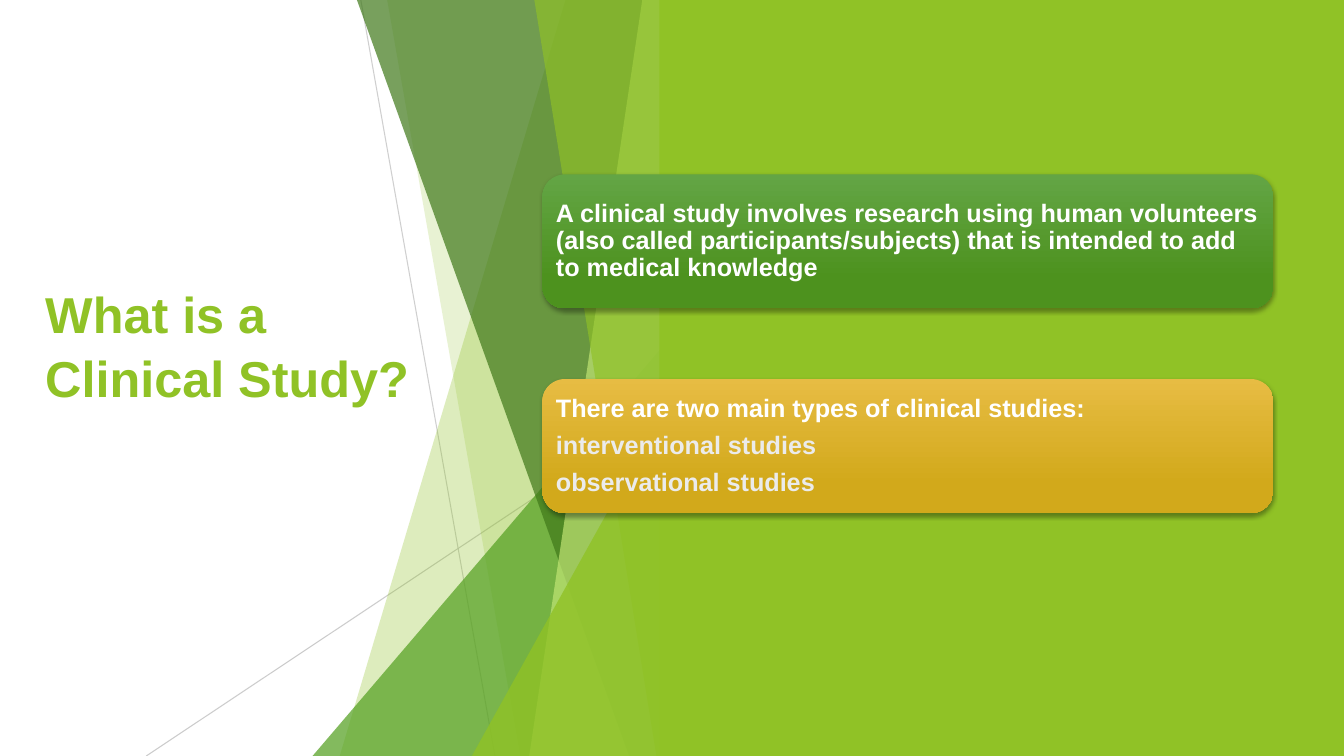
import pptx
import pptx.util
import pptx.dml.color
import pptx.enum.shapes
import pptx.enum.text
import pptx.oxml
import pptx.oxml.ns

COLORS = {
    "lime": "90C226", "green": "54A021", "forest": "3F7819", "pale": "C0E474",
    "line": "BFBFBF", "white": "FFFFFF", "soft white": "EBEBEB", "shadow": "000000",
    "card green top": "63A545", "card green": "4D921E",
    "card gold top": "E7BC43", "card gold": "D2A91B",
}
SHAPES = pptx.enum.shapes.MSO_SHAPE
NAMESPACE = pptx.oxml.ns.nsdecls("a")

presentation = pptx.Presentation()
presentation.slide_width = pptx.util.Inches(13.333)
presentation.slide_height = pptx.util.Inches(7.5)
slide = presentation.slides.add_slide(presentation.slide_layouts[6])


def place(*shares):
    """Turn alternating x and y percentages of the slide into lengths."""
    sides = (presentation.slide_width, presentation.slide_height)
    return [round(share * sides[i % 2] / 100) for i, share in enumerate(shares)]


def paint(color_format, color, opacity=100):
    color_format.rgb = pptx.dml.color.RGBColor.from_string(COLORS[color])
    if opacity < 100:
        solid = color_format._xFill if hasattr(color_format, "_xFill") else color_format._color._xClr.getparent()
        solid[0].append(pptx.oxml.parse_xml(f'<a:alpha {NAMESPACE} val="{opacity * 1000}"/>'))


# Thin crossing lines
for ends, opacity in (((26.85, 0, 36.83, 100), 75), ((50, 53.73, 10.88, 100), 80)):
    line = slide.shapes.add_connector(pptx.enum.shapes.MSO_CONNECTOR.STRAIGHT, *place(*ends))
    line.line.width = pptx.util.Pt(0.75)
    line.line.fill.solid()
    paint(line.line.fill.fore_color, "line", opacity)
    line._element.spPr.append(pptx.oxml.parse_xml(f"<a:effectLst {NAMESPACE}/>"))

# Translucent facets up to mid-slide: colour, opacity, top left x, bottom left x, triangle top
facets = [
    ("lime", 30, 42.08, 25.28, None),
    ("lime", 20, 28.81, 38.71, None),
    ("green", 72, None, 23.26, 44.4),
    ("forest", 70, 26.56, 46.81, None),
    ("pale", 70, 47.79, 39.38, None),
    ("lime", 65, 39.76, 48.84, None),
    ("lime", 80, None, 35.11, 52.4),
]
for color, opacity, top_left, bottom_left, triangle_top in facets:
    if triangle_top is None:
        builder = slide.shapes.build_freeform(*place(top_left, 0))
        builder.add_line_segments([place(50, 0), place(50, 100), place(bottom_left, 100)])
        facet = builder.convert_to_shape()
    else:
        box = place(bottom_left, triangle_top, 50 - bottom_left, 100 - triangle_top)
        facet = slide.shapes.add_shape(SHAPES.ISOSCELES_TRIANGLE, *box)
        facet.adjustments[0] = 1
    facet.shadow.inherit = False
    facet.line.fill.background()
    facet.fill.solid()
    paint(facet.fill.fore_color, color, opacity)

# Green right half
panel = slide.shapes.add_shape(SHAPES.RECTANGLE, *place(49.06, 0, 50.94, 100))
panel.shadow.inherit = False
panel.line.fill.background()
panel.fill.solid()
paint(panel.fill.fore_color, "lime")

# Title
title = slide.shapes.add_textbox(*place(2.63, 20.27, 29.11, 59.73))
title.text_frame.word_wrap = True
title.text_frame.vertical_anchor = pptx.enum.text.MSO_ANCHOR.MIDDLE
title.text_frame.margin_bottom = place(0, 10)[1]
title.text_frame.text = "What is a Clinical Study?"
paragraph = title.text_frame.paragraphs[0]
paragraph.line_spacing = 1.05
font = paragraph.runs[0].font
font.name, font.size, font.bold = "Arial", pptx.util.Pt(36), True
paint(font.color, "lime")

# Cards
cards = [
    ("card green", [
        "A clinical study involves research using human volunteers (also called "
        "participants/subjects) that is intended to add to medical knowledge",
    ]),
    ("card gold", [
        "There are two main types of clinical studies:",
        "interventional studies",
        "observational studies",
    ]),
]
for row, (color, lines) in enumerate(cards):
    card = slide.shapes.add_shape(SHAPES.ROUNDED_RECTANGLE, *place(40.36, 23.07 + 27.07 * row, 54.39, 17.73))
    card.line.fill.background()
    card.fill.gradient()
    card.fill.gradient_angle = 270
    for stop, position, shade in zip(card.fill.gradient_stops, (0, 0.78), (color + " top", color)):
        stop.position = position
        paint(stop.color, shade)
    card._element.spPr.append(pptx.oxml.parse_xml(
        f'<a:effectLst {NAMESPACE}><a:outerShdw blurRad="{pptx.util.Pt(3)}" dist="{pptx.util.Pt(2)}" '
        f'dir="5400000" rotWithShape="0"><a:srgbClr val="{COLORS["shadow"]}"><a:alpha val="35000"/>'
        "</a:srgbClr></a:outerShdw></a:effectLst>"))

    frame = card.text_frame
    frame.word_wrap = True
    frame.vertical_anchor = pptx.enum.text.MSO_ANCHOR.MIDDLE
    frame.margin_left = frame.margin_right = frame.margin_top = frame.margin_bottom = pptx.util.Inches(0.07)
    frame.text = "\n".join(lines)
    for index, paragraph in enumerate(frame.paragraphs):
        paragraph.alignment = pptx.enum.text.PP_ALIGN.LEFT
        paragraph.line_spacing = 0.9
        paragraph.space_after = pptx.util.Pt(7)
        font = paragraph.runs[0].font
        font.name, font.size, font.bold = "Arial", pptx.util.Pt(18), True
        paint(font.color, "soft white" if index else "white")

presentation.save("out.pptx")
